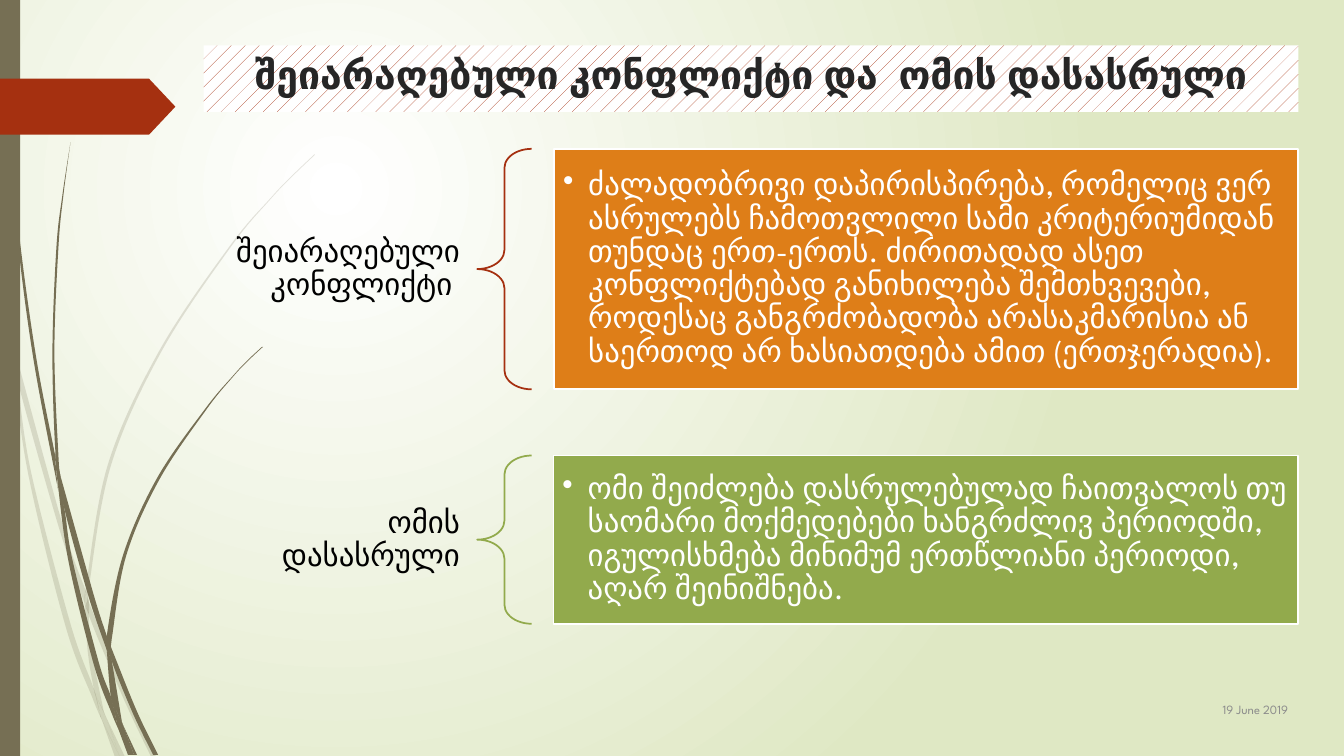
from dataclasses import dataclass

from lxml import etree
from pptx import Presentation
from pptx.dml.color import RGBColor
from pptx.enum.dml import MSO_PATTERN
from pptx.enum.shapes import MSO_SHAPE
from pptx.enum.text import MSO_ANCHOR, MSO_AUTO_SIZE, PP_ALIGN
from pptx.oxml.ns import qn
from pptx.util import Pt

RECTANGLE = MSO_SHAPE.RECTANGLE
LEFT_BRACE = MSO_SHAPE.LEFT_BRACE
ARROW_TAG = MSO_SHAPE.PENTAGON
TOP, MIDDLE = MSO_ANCHOR.TOP, MSO_ANCHOR.MIDDLE
LEFT, CENTER, RIGHT = PP_ALIGN.LEFT, PP_ALIGN.CENTER, PP_ALIGN.RIGHT

WHITE = RGBColor(0xFF, 0xFF, 0xFF)
BLACK = RGBColor(0, 0, 0)
CHARCOAL = RGBColor(0x26, 0x26, 0x26)
GREY = RGBColor(0x8C, 0x8C, 0x8C)
PALE_GREEN = RGBColor(0xDF, 0xE8, 0xC4)
TAUPE = RGBColor(0x76, 0x6F, 0x54)
RUST = RGBColor(0xA5, 0x30, 0x10)
ORANGE = RGBColor(0xDE, 0x7E, 0x18)
GREEN = RGBColor(0x92, 0xAA, 0x4C)

FONT = "League Spartan"
BODY_SIZE = 22
BLADE_UNIT = Pt(0.72)

Point = tuple[float, float]


@dataclass(frozen=True)
class Blade:
    """A piece of grass: one smooth edge out, one back, in BLADE_UNIT."""
    out: list[Point]
    back: list[Point]


@dataclass(frozen=True)
class Topic:
    label: str
    explanation: str
    top: float
    height: float
    left: float
    label_top: float
    label_height: float
    brace_color: RGBColor
    box_color: RGBColor


FAINT_BLADES = [
    Blade([(0, 299), (10, 344), (11, 350)], [(11, 350), (9, 322), (0, 282)]),
    Blade([(14, 345), (17, 376), (58, 522), (84, 599)], [(85, 586), (62, 520), (14, 345)]),
    Blade([(88, 596), (88, 610), (123, 694), (150, 751)],
          [(155, 751), (127, 692), (92, 607), (88, 596)]),
    Blade([(105, 711), (119, 751)], [(124, 751), (105, 711)]),
    Blade([(11, 350), (28, 470), (65, 621), (92, 693), (101, 714)],
          [(99, 707), (93, 683), (70, 619), (31, 469), (17, 376), (11, 350)]),
    Blade([(84, 599), (87, 646), (93, 683), (96, 692), (105, 711)],
          [(103, 706), (91, 646), (88, 610), (88, 608), (84, 599)]),
    Blade([(312, 153), (289, 175), (268, 197), (228, 244), (158, 348), (107, 461),
           (85, 584), (85, 586)],
          [(88, 596), (88, 584), (110, 462), (160, 349), (229, 245), (268, 198),
           (290, 175), (312, 154)]),
    Blade([(101, 714), (114, 751)], [(119, 751), (101, 714)]),
    Blade([(85, 586), (84, 599), (88, 608)], [(88, 610), (88, 596), (85, 586)]),
    Blade([(93, 683), (99, 707), (101, 714), (119, 751)],
          [(119, 751), (105, 711), (96, 692), (93, 683)]),
]
SOLID_BLADES = [
    Blade([(3, 0), (4, 48), (7, 110), (17, 233), (33, 355), (56, 477), (57, 481)],
          [(57, 481), (55, 457), (55, 453), (36, 355), (19, 232), (8, 109), (5, 48), (4, 0)]),
    Blade([(60, 472), (64, 505), (88, 592), (106, 645)],
          [(106, 633), (106, 631), (93, 590), (60, 472)]),
    Blade([(110, 641), (111, 656), (132, 708), (152, 749)],
          [(157, 749), (136, 706), (113, 649), (110, 641)]),
    Blade([(57, 477), (68, 557), (93, 659), (111, 708), (117, 722)],
          [(116, 717), (110, 691), (98, 657), (72, 556), (64, 505), (57, 477)]),
    Blade([(70, 141), (62, 193), (56, 245), (52, 349), (55, 449), (60, 472)],
          [(60, 472), (58, 453), (54, 349), (58, 245), (63, 193), (70, 141)]),
    Blade([(122, 719), (133, 749)], [(136, 749), (122, 719)]),
    Blade([(55, 449), (55, 453), (57, 477), (64, 505)], [(60, 472), (55, 449)]),
    Blade([(260, 344), (245, 358), (231, 373), (204, 405), (156, 474), (122, 551),
           (106, 631), (110, 641)],
          [(111, 633), (125, 552), (158, 476), (205, 406), (231, 374), (245, 359),
           (261, 344)]),
    Blade([(117, 722), (127, 749)], [(131, 749), (117, 722)]),
    Blade([(106, 645), (110, 691), (116, 706), (122, 719)],
          [(121, 716), (111, 656), (109, 651), (106, 645)]),
    Blade([(106, 631), (106, 645), (109, 651), (111, 656)], [(110, 641), (106, 631)]),
    Blade([(110, 691), (116, 717), (117, 722), (130, 749)],
          [(133, 749), (122, 719), (116, 706), (110, 691)]),
]

TOPICS = [
    Topic("შეიარაღებული კონფლიქტი ",
          "ძალადობრივი დაპირისპირება, რომელიც ვერ ასრულებს ჩამოთვლილი სამი "
          "კრიტერიუმიდან თუნდაც ერთ-ერთს. ძირითადად ასეთ კონფლიქტებად განიხილება "
          "შემთხვევები, როდესაც განგრძობადობა არასაკმარისია ან საერთოდ არ "
          "ხასიათდება ამით (ერთჯერადია).",
          106.3, 171.8, 395.7, 161.3, 61.2, RUST, ORANGE),
    Topic("ომის დასასრული",
          "ომი შეიძლება დასრულებულად ჩაითვალოს თუ საომარი მოქმედებები ხანგრძლივ "
          "პერიოდში, იგულისხმება მინიმუმ ერთწლიანი პერიოდი, აღარ შეინიშნება.",
          325.4, 120.2, 395.3, 334.8, 101.5, GREEN, GREEN),
]


def curve_points(knots: list[Point]) -> list[Point]:
    """Two control points and an end point for each span of a smooth curve."""
    padded = [knots[0], *knots, knots[-1]]
    points = []
    for a, b, c, d in zip(padded, padded[1:], padded[2:], padded[3:]):
        points.append((b[0] + (c[0] - a[0]) / 6, b[1] + (c[1] - a[1]) / 6))
        points.append((c[0] - (d[0] - b[0]) / 6, c[1] - (d[1] - b[1]) / 6))
        points.append(c)
    return points


def add_blade(slide, blade: Blade, opacity: int) -> None:
    outline = [blade.out[0], *curve_points(blade.out)]
    if blade.back[0] != blade.out[-1]:
        outline += curve_points([blade.out[-1], blade.back[0]])
    outline += curve_points(blade.back)
    emu = [(x * BLADE_UNIT, y * BLADE_UNIT) for x, y in outline]
    builder = slide.shapes.build_freeform(*emu[0], scale=1.0)
    builder.add_line_segments(emu[1:], close=True)
    shape = builder.convert_to_shape()
    spans = shape._element.spPr.findall(".//" + qn("a:lnTo"))
    for first, second, end in zip(spans[::3], spans[1::3], spans[2::3]):
        bezier = etree.Element(qn("a:cubicBezTo"))
        first.addprevious(bezier)
        for span in (first, second, end):
            bezier.append(span[0])
            span.getparent().remove(span)
    shape.shadow.inherit = False
    shape.line.fill.background()
    shape.fill.solid()
    shape.fill.fore_color.rgb = TAUPE
    if opacity < 100:
        color = shape._element.spPr.find(".//" + qn("a:srgbClr"))
        etree.SubElement(color, qn("a:alpha"), val=str(opacity * 1000))


def paint_background(slide) -> None:
    fill = slide.background.fill
    fill.gradient()
    for stop, color in zip(fill.gradient_stops, (WHITE, PALE_GREEN)):
        stop.color.rgb = color
    gradient = slide.background._cSld.find(".//" + qn("a:gradFill"))
    gradient.remove(gradient.find(qn("a:lin")))
    circle = etree.SubElement(gradient, qn("a:path"), {"path": "circle"})
    etree.SubElement(circle, qn("a:fillToRect"), l="50000", t="50000", r="100000", b="100000")


def add_preset(slide, preset, left: float, top: float, width: float, height: float,
               fill: RGBColor | None = None, line: RGBColor | None = None):
    shape = slide.shapes.add_shape(preset, Pt(left), Pt(top), Pt(width), Pt(height))
    shape.shadow.inherit = False
    shape.fill.background()
    if fill is not None:
        shape.fill.solid()
        shape.fill.fore_color.rgb = fill
    shape.line.fill.background()
    if line is not None:
        shape.line.color.rgb = line
        shape.line.width = Pt(1.25)
    return shape


def write(frame, text: str, size: float, color: RGBColor, align, anchor=MIDDLE,
          bold: bool = False, inset: Point = (7.2, 3.6), spacing: float = 1.0):
    frame.text = text
    frame.word_wrap = True
    frame.auto_size = MSO_AUTO_SIZE.NONE
    frame.vertical_anchor = anchor
    frame.margin_left = frame.margin_right = Pt(inset[0])
    frame.margin_top = frame.margin_bottom = Pt(inset[1])
    paragraph = frame.paragraphs[0]
    paragraph.alignment, paragraph.line_spacing = align, spacing
    font = paragraph.runs[0].font
    font.name, font.size, font.bold = FONT, Pt(size), bold
    font.color.rgb = color
    return paragraph


def add_bullet(paragraph) -> None:
    properties = paragraph._p.get_or_add_pPr()
    properties.set("marL", str(Pt(18)))
    properties.set("indent", str(-Pt(18)))
    etree.SubElement(properties, qn("a:buChar"), char="•")


def add_topic(slide, topic: Topic) -> None:
    label = slide.shapes.add_textbox(Pt(145.4), Pt(topic.label_top),
                                     Pt(195.4), Pt(topic.label_height))
    write(label.text_frame, topic.label, BODY_SIZE, BLACK, RIGHT,
          inset=(12.2, 4.3), spacing=0.9)
    brace = add_preset(slide, LEFT_BRACE, 340.9, topic.top, 38.9, topic.height,
                       line=topic.brace_color)
    brace.adjustments[0] = 0.35
    box = add_preset(slide, RECTANGLE, topic.left, topic.top, 927 - topic.left, topic.height,
                     fill=topic.box_color, line=WHITE)
    add_bullet(write(box.text_frame, topic.explanation, BODY_SIZE, WHITE, LEFT,
                     inset=(6.5, 6.5), spacing=0.9))


def main() -> None:
    deck = Presentation()
    deck.slide_width, deck.slide_height = Pt(960), Pt(540)
    slide = deck.slides.add_slide(deck.slide_layouts[5])
    paint_background(slide)
    for blades, opacity in ((FAINT_BLADES, 20), (SOLID_BLADES, 100)):
        for blade in blades:
            add_blade(slide, blade, opacity)
    add_preset(slide, RECTANGLE, 0, 0, 14.4, 540, fill=TAUPE)
    tag = add_preset(slide, ARROW_TAG, 0, 56.2, 125.3, 40, fill=RUST)
    tag.adjustments[0] = 0.47

    title = slide.shapes.title
    title.left, title.top, title.width, title.height = Pt(145.4), Pt(32.4), Pt(782), Pt(47.5)
    title.fill.patterned()
    title.fill.pattern = MSO_PATTERN.PERCENT_5
    title.fill.fore_color.rgb, title.fill.back_color.rgb = RUST, WHITE
    write(title.text_frame, "შეიარაღებული კონფლიქტი და  ომის დასასრული", 28,
          CHARCOAL, CENTER, anchor=TOP, bold=True)

    for topic in TOPICS:
        add_topic(slide, topic)
    date = slide.shapes.add_textbox(Pt(837.1), Pt(491.9), Pt(90), Pt(29.5))
    write(date.text_frame, "19 June 2019", 9, GREY, RIGHT)
    deck.save("out.pptx")


if __name__ == "__main__":
    main()
